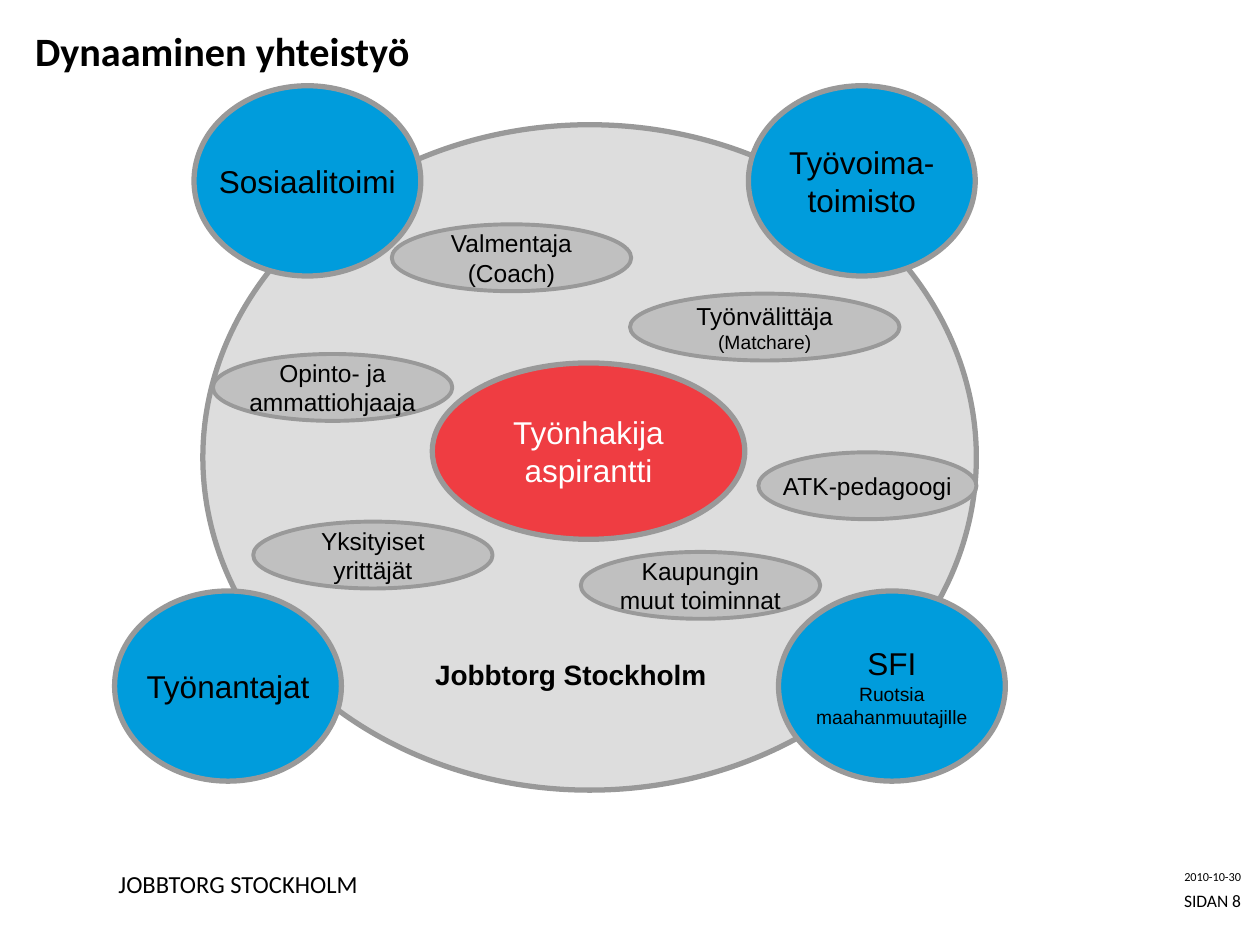
from pptx import Presentation
from pptx.dml.color import RGBColor
from pptx.enum.shapes import MSO_SHAPE
from pptx.enum.text import MSO_ANCHOR, PP_ALIGN
from pptx.util import Pt

BLACK = RGBColor(0x00, 0x00, 0x00)
WHITE = RGBColor(0xFF, 0xFF, 0xFF)
PALE = RGBColor(0xDD, 0xDD, 0xDD)
SILVER = RGBColor(0xC0, 0xC0, 0xC0)
OUTLINE = RGBColor(0x99, 0x99, 0x99)
BLUE = RGBColor(0x00, 0x9C, 0xDC)
RED = RGBColor(0xEF, 0x3D, 0x42)

PARTNER_W, PARTNER_H = 129.6, 108.7
ROLE_W, ROLE_H = 136.8, 38.2

PARTNERS = [
    (0, 288.7, [("Työnantajat", 18)]),
    (379.4, 288.7, [("SFI", 18), ("Ruotsia", 11), ("maahanmuutajille", 11)]),
    (45.4, 0, [("Sosiaalitoimi", 18)]),
    (362.2, 0, [("Työvoima-", 18), ("toimisto", 18)]),
]
ROLES = [
    (294.5, 118.8, 154, [("Työnvälittäja", 14), ("(Matchare)", 11)]),
    (56.2, 153.3, ROLE_W, [("Opinto- ja", 14), ("ammattiohjaaja", 14)]),
    (79.2, 249.1, ROLE_W, [("Yksityiset", 14), ("yrittäjät", 14)]),
    (158.4, 79.2, ROLE_W, [("Valmentaja", 14), ("(Coach)", 14)]),
    (367.9, 209.5, 124.6, [("ATK-pedagoogi", 14)]),
    (266.4, 266.4, ROLE_W, [("Kaupungin", 14), ("muut toiminnat", 14)]),
]


def write(tf, lines, font, color, align, bold=False):
    tf.text = "\n".join(text for text, size in lines)
    for p, (text, size) in zip(tf.paragraphs, lines):
        p.alignment = align
        for r in p.runs:
            r.font.name = font
            r.font.size = Pt(size)
            r.font.bold = bold
            r.font.color.rgb = color


def add_text(s, x, y, w, h, text, size, font="Calibri",
             align=PP_ALIGN.LEFT, bold=False):
    tf = s.shapes.add_textbox(Pt(x), Pt(y), Pt(w), Pt(h)).text_frame
    tf.word_wrap = True
    tf.margin_left = tf.margin_right = tf.margin_top = tf.margin_bottom = 0
    write(tf, [(text, size)], font, BLACK, align, bold)
    return tf


def add_ellipse(s, x, y, w, h, fill, line_width, lines=(), color=BLACK):
    sp = s.shapes.add_shape(MSO_SHAPE.OVAL, Pt(x), Pt(y), Pt(w), Pt(h))
    sp.shadow.inherit = False
    sp.fill.solid()
    sp.fill.fore_color.rgb = fill
    sp.line.color.rgb = OUTLINE
    sp.line.width = Pt(line_width)
    if lines:
        tf = sp.text_frame
        tf.word_wrap = False
        tf.vertical_anchor = MSO_ANCHOR.MIDDLE
        write(tf, lines, "Arial", color, PP_ALIGN.CENTER)


def add_title(s, x, y, w, h):
    add_text(s, x, y, w, h, "Dynaaminen yhteistyö", 23, bold=True)


def add_diagram(s, x, y):
    add_ellipse(s, x + 50.4, y + 22.3, 442, 380.2, PALE, 3)
    add_ellipse(s, x + 181.5, y + 158.4, 178.6, 100.8, RED, 3,
                [("Työnhakija", 18), ("aspirantti", 18)], WHITE)
    tf = add_text(s, x + 170, y + 323.2, 181.4, 26.6, "Jobbtorg Stockholm",
                  16, "Arial", PP_ALIGN.CENTER, True)
    tf.margin_top = tf.margin_bottom = Pt(3.6)
    for dx, dy, w, lines in ROLES:
        add_ellipse(s, x + dx, y + dy, w, ROLE_H, SILVER, 2.25, lines)
    for dx, dy, lines in PARTNERS:
        add_ellipse(s, x + dx, y + dy, PARTNER_W, PARTNER_H, BLUE, 3, lines)


def add_footer(s, x, y, w):
    add_text(s, x, y, 292, 17.3, "JOBBTORG STOCKHOLM", 14)
    right_w = 227.5
    right_x = x + w - right_w
    add_text(s, right_x, y, right_w, 11.5, "2010-10-30", 7,
             align=PP_ALIGN.RIGHT)
    add_text(s, right_x, y + 11.5, right_w, 15.8, "SIDAN 8", 10,
             align=PP_ALIGN.RIGHT)


def main():
    prs = Presentation()
    prs.slide_width, prs.slide_height = Pt(720), Pt(540)
    s = prs.slides.add_slide(prs.slide_layouts[6])
    add_title(s, 20, 15, 672, 39.6)
    add_diagram(s, 65.5, 49)
    add_footer(s, 67.7, 496.8, 641.5)
    prs.save("out.pptx")


if __name__ == "__main__":
    main()
